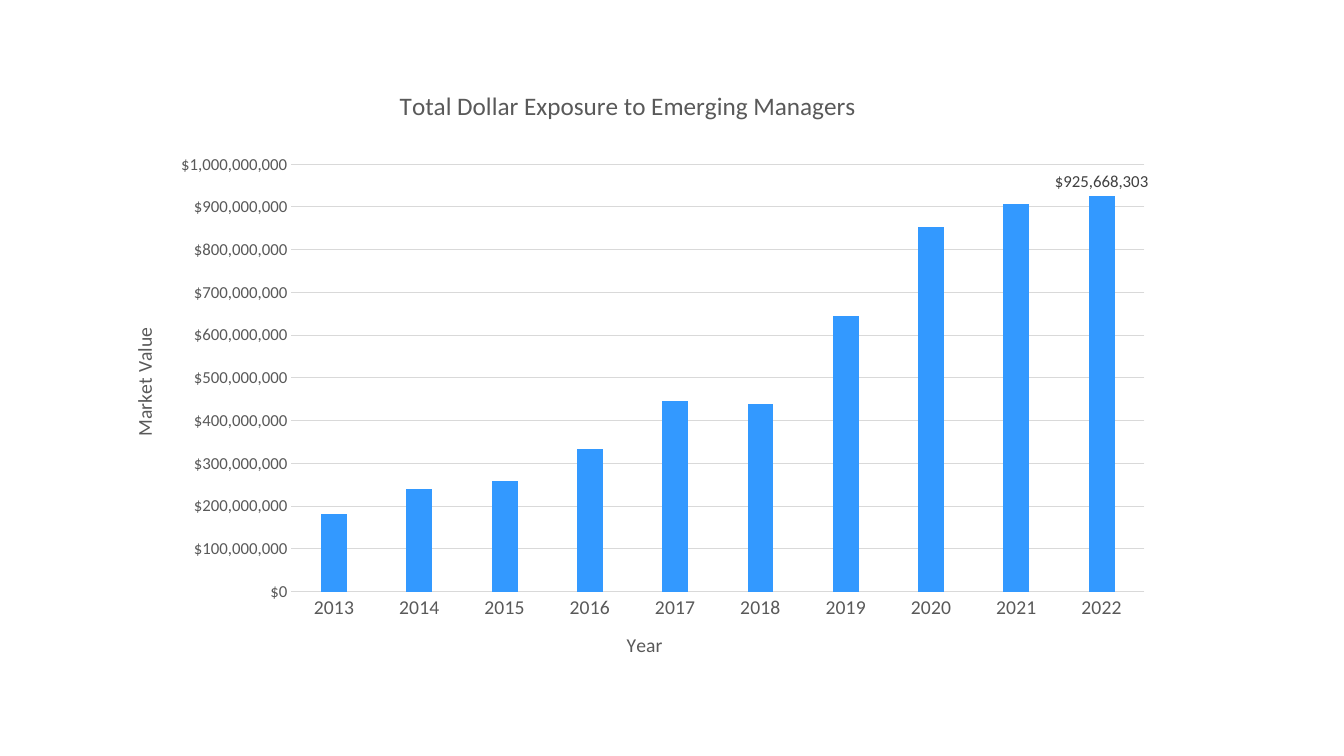
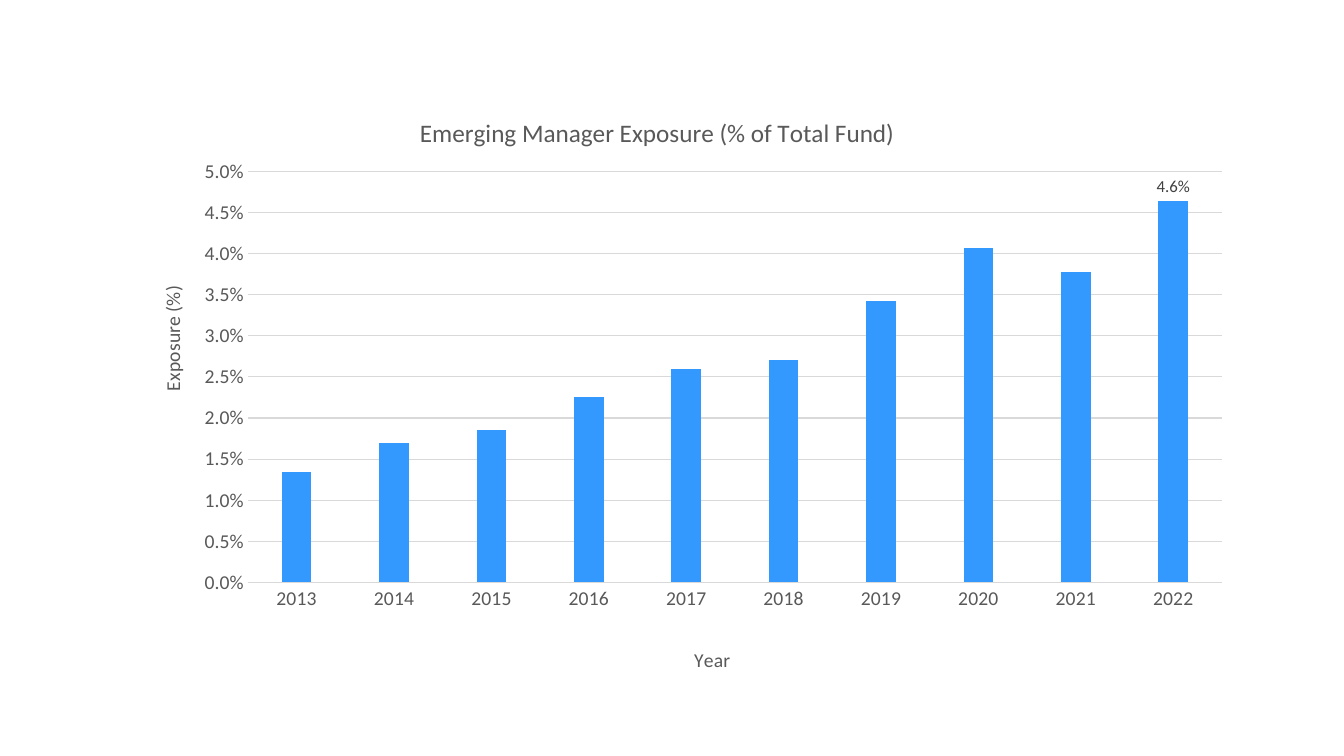
from dataclasses import dataclass

from lxml.etree import SubElement
from pptx import Presentation
from pptx.chart.data import CategoryChartData
from pptx.dml.color import RGBColor
from pptx.enum.chart import XL_CHART_TYPE, XL_LABEL_POSITION, XL_TICK_MARK
from pptx.oxml import parse_xml
from pptx.oxml.ns import nsdecls, qn
from pptx.util import Inches, Pt


@dataclass(frozen=True)
class Theme:
    font: str = "Calibri"
    text: RGBColor = RGBColor(0x59, 0x59, 0x59)
    label: RGBColor = RGBColor(0x40, 0x40, 0x40)
    grid: RGBColor = RGBColor(0xD9, 0xD9, 0xD9)
    bar: RGBColor = RGBColor(0x33, 0x99, 0xFF)
    title_size: int = 18
    axis_size: int = 14
    label_size: int = 12
    line_width: float = 0.75
    gap_width: int = 229


@dataclass(frozen=True)
class ColumnChart:
    title: str
    value_title: str
    number_format: str
    values: tuple
    maximum: float
    major_unit: float
    value_size: int
    frame: tuple
    plot: tuple
    title_at: tuple
    year_at: tuple
    value_title_at: tuple


THEME = Theme()
YEARS = [str(year) for year in range(2013, 2023)]

DOLLAR_EXPOSURE = ColumnChart(
    title="Total Dollar Exposure to Emerging Managers",
    value_title="Market Value",
    number_format='"$"#,##0',
    values=(180424375, 239201992, 258217315, 333932180, 445744568,
            439686334, 645972879, 852275672, 905941744, 925668303),
    maximum=1_000_000_000,
    major_unit=100_000_000,
    value_size=12,
    frame=(1.02, 0.58, 10.56, 6.3),
    plot=(2.89, 1.63, 8.46, 4.24),
    title_at=(3.92, 0.83),
    year_at=(6.18, 6.23),
    value_title_at=(1.26, 3.21),
)

PERCENT_EXPOSURE = ColumnChart(
    title="Emerging Manager Exposure (% of Total Fund)",
    value_title="Exposure (%)",
    number_format="0.0%",
    values=(0.0134, 0.017, 0.0185, 0.0225, 0.026,
            0.027, 0.0342, 0.0407, 0.0377, 0.0464),
    maximum=0.05,
    major_unit=0.005,
    value_size=14,
    frame=(1.33, 0.78, 10.94, 6.06),
    plot=(2.46, 1.7, 9.66, 4.08),
    title_at=(4.12, 1.1),
    year_at=(6.85, 6.38),
    value_title_at=(1.54, 2.8),
)


def style_font(font, size, color=THEME.text):
    font.name = THEME.font
    font.size = Pt(size)
    font.bold = False
    font.color.rgb = color


def style_line(line):
    line.color.rgb = THEME.grid
    line.width = Pt(THEME.line_width)


def set_layout(element, frame, position, size=None):
    left, top, width, height = frame
    settings = {"xMode": "edge", "yMode": "edge"}
    if size:
        settings = {"layoutTarget": "inner", **settings}
    settings["x"] = (position[0] - left) / width
    settings["y"] = (position[1] - top) / height
    if size:
        settings["w"] = size[0] / width
        settings["h"] = size[1] / height

    for old_layout in element.findall(qn("c:layout")):
        element.remove(old_layout)
    layout = parse_xml(f"<c:layout {nsdecls('c')}><c:manualLayout/></c:layout>")
    for name, value in settings.items():
        SubElement(layout[0], qn(f"c:{name}")).set("val", str(value))
    text = element.find(qn("c:tx"))
    if text is None:
        element.insert(0, layout)
    else:
        text.addnext(layout)


def set_title(title, text, size, frame, position, vertical=False):
    title.text_frame.text = text
    style_font(title.text_frame.paragraphs[0].font, size)
    set_layout(title.element, frame, position)
    if vertical:
        body = title.element.find(f".//{qn('a:bodyPr')}")
        body.set("rot", "-5400000")
        body.set("vert", "horz")


def format_axis(axis, size):
    axis.major_tick_mark = XL_TICK_MARK.NONE
    axis.minor_tick_mark = XL_TICK_MARK.NONE
    style_font(axis.tick_labels.font, size)


def format_axes(chart, content):
    category_axis = chart.category_axis
    format_axis(category_axis, THEME.axis_size)
    style_line(category_axis.format.line)
    set_title(category_axis.axis_title, "Year", THEME.axis_size,
              content.frame, content.year_at)

    value_axis = chart.value_axis
    format_axis(value_axis, content.value_size)
    value_axis.minimum_scale = 0
    value_axis.maximum_scale = content.maximum
    value_axis.major_unit = content.major_unit
    value_axis.tick_labels.number_format = content.number_format
    value_axis.tick_labels.number_format_is_linked = False
    value_axis.format.line.fill.background()
    value_axis.has_major_gridlines = True
    style_line(value_axis.major_gridlines.format.line)
    set_title(value_axis.axis_title, content.value_title, THEME.axis_size,
              content.frame, content.value_title_at, vertical=True)


def format_columns(plot):
    plot.gap_width = THEME.gap_width
    plot.vary_by_categories = False
    series = plot.series[0]
    series.format.fill.solid()
    series.format.fill.fore_color.rgb = THEME.bar
    last_label = series.points[len(YEARS) - 1].data_label
    style_font(last_label.font, THEME.label_size, THEME.label)
    last_label.position = XL_LABEL_POSITION.OUTSIDE_END


def add_column_chart(slide, content):
    data = CategoryChartData(number_format=content.number_format)
    data.categories = YEARS
    data.add_series(content.value_title, content.values)
    chart = slide.shapes.add_chart(
        XL_CHART_TYPE.COLUMN_CLUSTERED,
        *(Inches(length) for length in content.frame), data).chart
    chart.font.name = THEME.font
    chart.has_legend = False
    chart.has_title = True
    set_title(chart.chart_title, content.title, THEME.title_size,
              content.frame, content.title_at)
    format_axes(chart, content)
    format_columns(chart.plots[0])
    plot_area = chart.element.find(f".//{qn('c:plotArea')}")
    set_layout(plot_area, content.frame, content.plot[:2], content.plot[2:])


def main():
    presentation = Presentation()
    presentation.slide_width = Inches(13.33)
    presentation.slide_height = Inches(7.5)
    blank_layout = presentation.slide_layouts.get_by_name("Blank")
    for content in (DOLLAR_EXPOSURE, PERCENT_EXPOSURE):
        add_column_chart(presentation.slides.add_slide(blank_layout), content)
    presentation.save("out.pptx")


if __name__ == "__main__":
    main()
